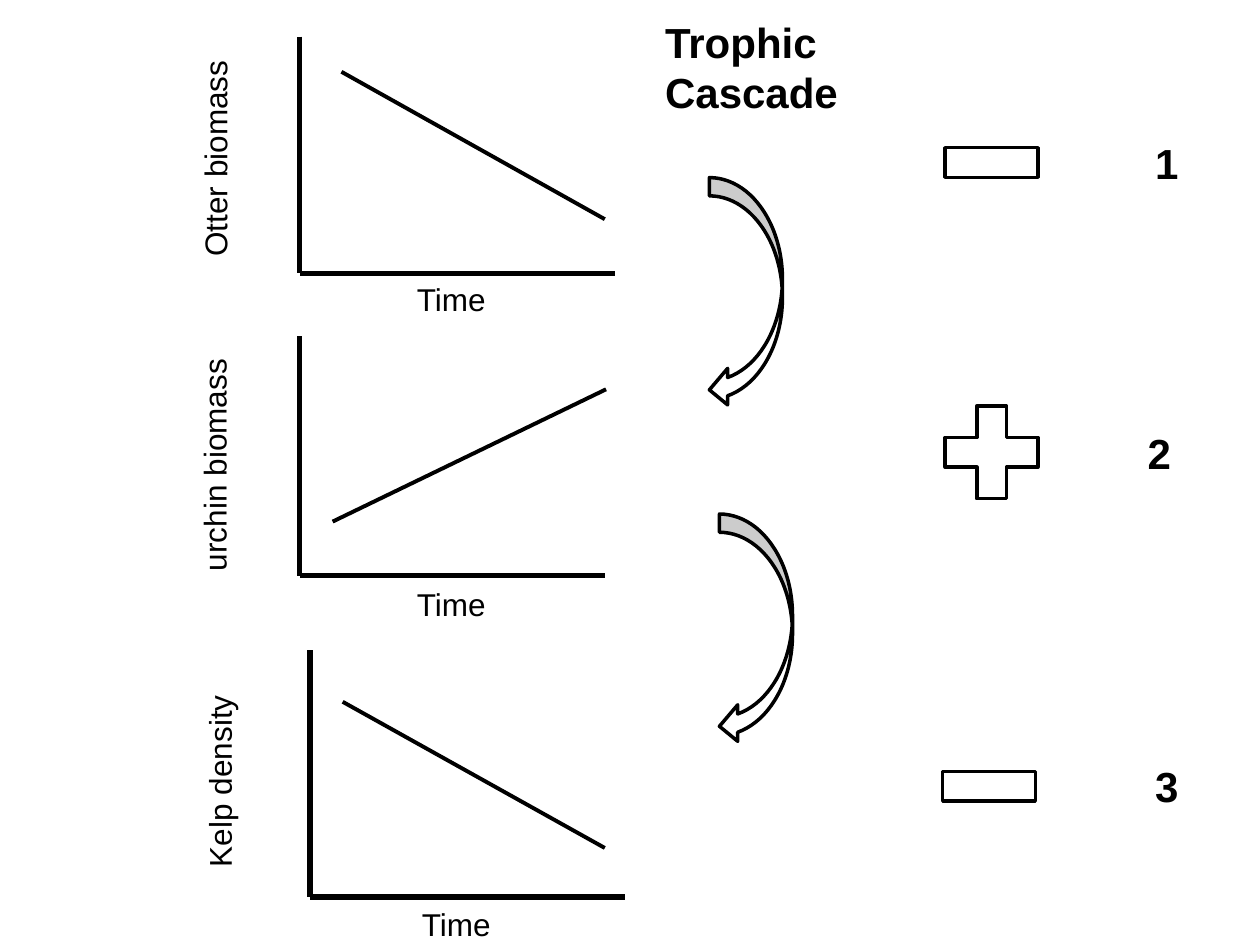
from pptx import Presentation
from pptx.dml.color import RGBColor
from pptx.enum import shapes, text
from pptx.oxml.ns import qn
from pptx.util import Inches, Pt

COLORS = {"ink": "000000", "paper": "FFFFFF"}
FONT = "Arial"


def color(name):
    return RGBColor.from_string(COLORS[name])


def add_text(s, lines, x, y, w, h, size=18, bold=False, rotation=0):
    box = s.shapes.add_textbox(Inches(x), Inches(y), Inches(w), Inches(h))
    box.rotation = rotation
    tf = box.text_frame
    tf.word_wrap = False
    tf.auto_size = text.MSO_AUTO_SIZE.SHAPE_TO_FIT_TEXT
    for i, line in enumerate(lines.split("\n")):
        p = tf.add_paragraph() if i else tf.paragraphs[0]
        r = p.add_run()
        r.text = line
        r.font.name = FONT
        r.font.size = Pt(size)
        r.font.bold = bold
        r.font.color.rgb = color("ink")


def add_line(s, start, end, width):
    line = s.shapes.add_connector(
        shapes.MSO_CONNECTOR.STRAIGHT, *map(Inches, start + end))
    line.line.color.rgb = color("ink")
    line.line.width = Pt(width)
    sp_pr = line._element.spPr
    sp_pr.append(sp_pr.makeelement(qn("a:effectLst"), {}))


def add_symbol(s, kind, x, y, w, h):
    sp = s.shapes.add_shape(kind, Inches(x), Inches(y), Inches(w), Inches(h))
    sp.shadow.inherit = False
    sp.fill.solid()
    sp.fill.fore_color.rgb = color("paper")
    sp.line.color.rgb = color("ink")
    sp.line.width = Pt(2)


def add_graph(s, label, label_box, origin, top, right, trend, time_at):
    """Sketch graph: two axes, a trend line and the axis labels."""
    x, y = origin
    add_line(s, (x, top), origin, 3)
    add_line(s, (right, y), origin, 3)
    add_line(s, *trend, 2.25)
    add_text(s, "Time", *time_at, 0.75, 0.4)
    add_text(s, label, *label_box, 0.71, rotation=270)


def main():
    prs = Presentation()
    prs.slide_width, prs.slide_height = Inches(10), Inches(7.5)
    s = prs.slides.add_slide(prs.slide_layouts[6])

    # Title
    add_text(s, "Trophic\nCascade", 5.18, 0.08, 1.59, 0.91, size=24, bold=True)

    # Graphs, from top predator to kelp
    add_graph(s, "Otter biomass", (0.94, 0.86, 1.84), (2.38, 2.17), 0.29, 4.88,
              ((2.71, 0.57), (4.8, 1.74)), (3.21, 2.17))
    add_graph(s, "urchin biomass", (0.87, 3.29, 1.97), (2.38, 4.57), 2.67, 4.8,
              ((2.64, 4.14), (4.81, 3.09)), (3.21, 4.59))
    add_graph(s, "Kelp density", (1.07, 5.8, 1.65), (2.46, 7.12), 5.16, 4.96,
              ((2.72, 5.57), (4.8, 6.73)), (3.25, 7.13))

    # Cascade arrows between the levels
    for x, y in ((5.63, 1.41), (5.71, 4.08)):
        add_symbol(s, shapes.MSO_SHAPE.CURVED_LEFT_ARROW, x, y, 0.58, 1.83)

    # Direction of change and level number
    minus, plus = shapes.MSO_SHAPE.MATH_MINUS, shapes.MSO_SHAPE.MATH_PLUS
    levels = ((minus, 7.37, 0.79, 9.07), (plus, 7.37, 3.09, 9.01),
              (minus, 7.35, 5.74, 9.07))
    for number, (kind, x, y, number_x) in enumerate(levels, 1):
        add_symbol(s, kind, x, y, 1, 1)
        add_text(s, str(number), number_x, y + 0.25, 0.39, 0.5, size=24, bold=True)

    prs.save("out.pptx")


if __name__ == "__main__":
    main()
